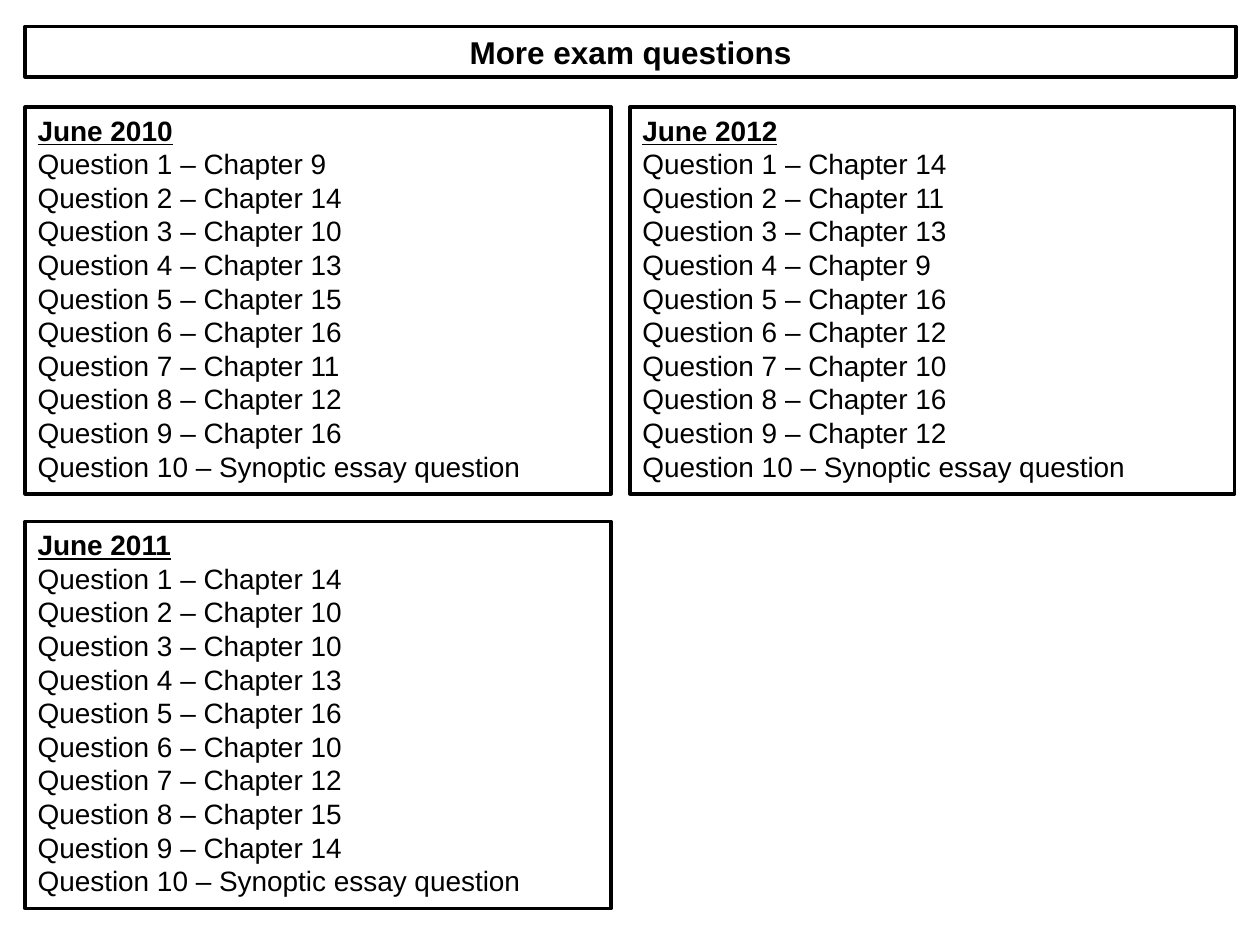
import pptx
import pptx.util
import pptx.dml.color
import pptx.enum.text

Inches = pptx.util.Inches
Pt = pptx.util.Pt


def color(hex_string):
    return pptx.dml.color.RGBColor.from_string(hex_string)


def style_box(box, size):
    box.fill.solid()
    box.fill.fore_color.rgb = color("FFFFFF")
    box.line.color.rgb = color("000000")
    box.line.width = Pt(2)
    frame = box.text_frame
    frame.word_wrap = True
    frame.auto_size = pptx.enum.text.MSO_AUTO_SIZE.NONE
    frame.vertical_anchor = pptx.enum.text.MSO_ANCHOR.TOP
    for para in frame.paragraphs:
        para.font.name = "Arial"
        para.font.size = Pt(size)
        para.font.color.rgb = color("000000")
    heading = frame.paragraphs[0]
    heading.font.bold = True
    return heading


deck = pptx.Presentation()
deck.slide_width = Inches(10)
deck.slide_height = Inches(7.5)
page = deck.slides.add_slide(deck.slide_layouts[5])

title = page.shapes.title
title.left, title.top = Inches(0.2), Inches(0.21)
title.width, title.height = Inches(9.61), Inches(0.4)
title.text_frame.text = "More exam questions"
style_box(title, 18).alignment = pptx.enum.text.PP_ALIGN.CENTER

exams = [
    ("June 2010", 0.2, 0.85, 4.65, [9, 14, 10, 13, 15, 16, 11, 12, 16]),
    ("June 2011", 0.2, 4.14, 4.65, [14, 10, 10, 13, 16, 10, 12, 15, 14]),
    ("June 2012", 5, 0.85, 4.8, [14, 11, 13, 9, 16, 12, 10, 16, 12]),
]
for session, left, top, width, chapters in exams:
    lines = [session]
    for number, chapter in enumerate(chapters, start=1):
        lines.append(f"Question {number} – Chapter {chapter}")
    lines.append("Question 10 – Synoptic essay question")
    exam_box = page.shapes.add_textbox(Inches(left), Inches(top), Inches(width), Inches(3.07))
    exam_box.text_frame.text = "\n".join(lines)
    style_box(exam_box, 16).font.underline = True

deck.save("out.pptx")
